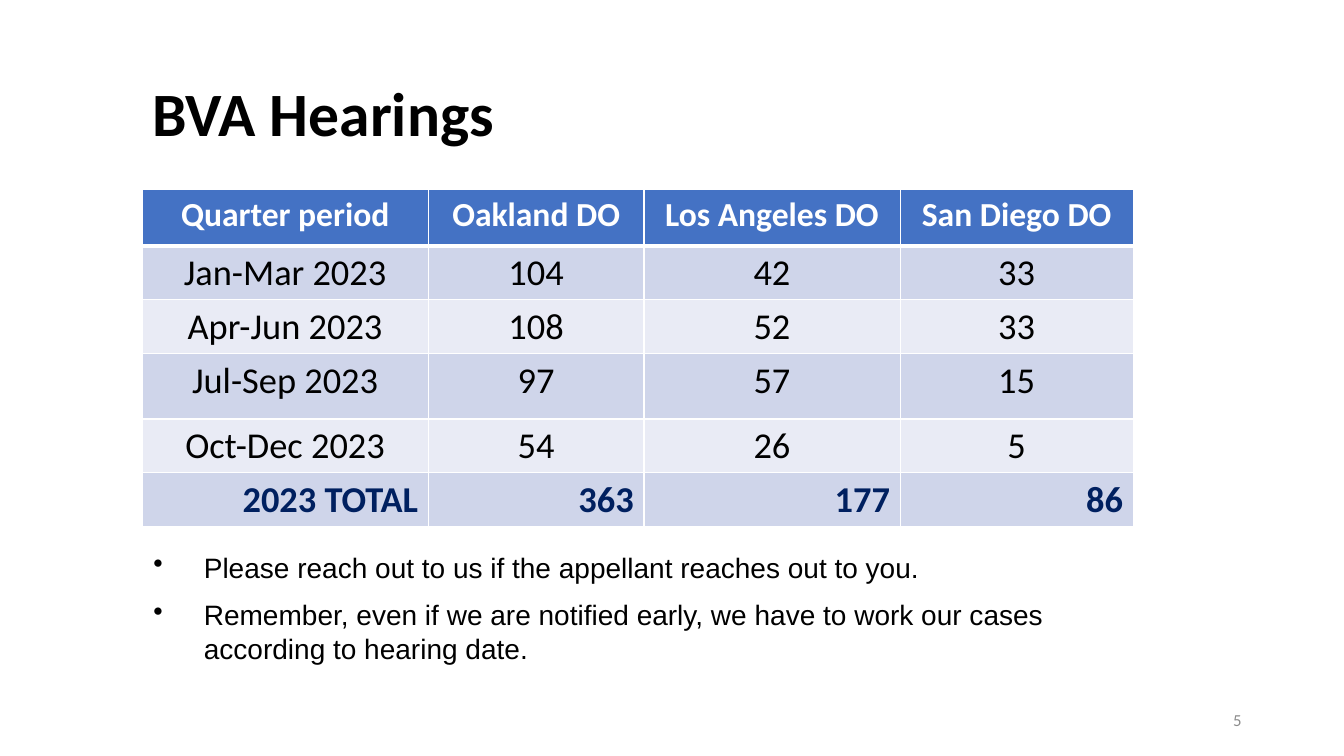
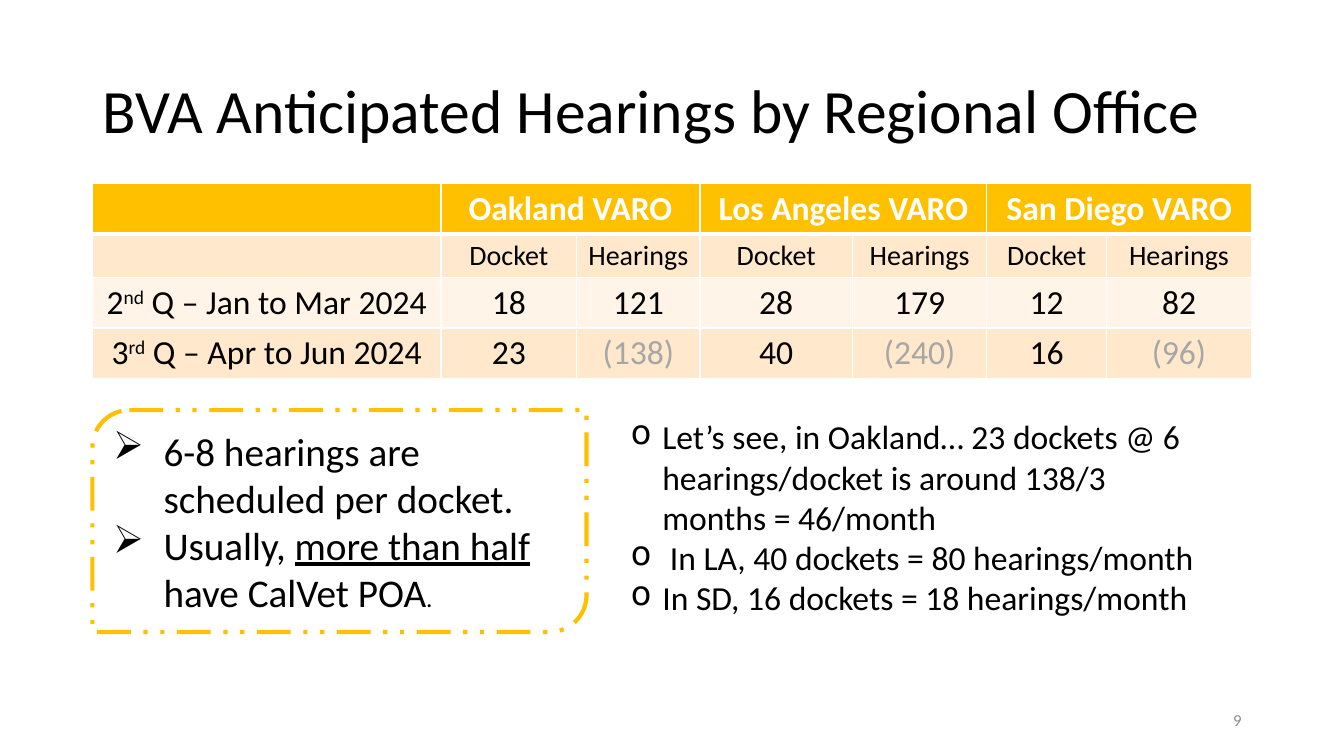
import pptx
import pptx.dml.color
import pptx.enum.dml
import pptx.enum.shapes
import pptx.enum.text
import pptx.oxml
import pptx.oxml.ns
import pptx.util

Pt = pptx.util.Pt
RGB = pptx.dml.color.RGBColor.from_string
ALIGN = pptx.enum.text.PP_ALIGN
ANCHOR = pptx.enum.text.MSO_ANCHOR
SHAPE = pptx.enum.shapes.MSO_SHAPE
NAMESPACE = pptx.oxml.ns.nsdecls("a")

THEME = {
    # Fonts
    "font": "Calibri", "note_font": "Arial",
    # Colours
    "text": "000000", "white": "FFFFFF", "page": "8C8C8C",
    "blue": "4472C4", "blue_bands": ("CFD5EA", "E9EBF5"), "total": "002060",
    "gold": "FFC000", "gold_bands": ("FFE8CC", "FFF4E7"), "estimate": "A6A6A6",
    # Type sizes
    "title": 44, "callout": 28, "count": 26, "body": 24, "note": 20,
    "full_stop": 18, "number": 12,
}


def write(paragraph, text, size, color=THEME["text"], bold=False,
          align=ALIGN.LEFT, font=THEME["font"], bullet=None):
    """Fill a paragraph with a string or a tuple of runs; bullet is (sign, left, hang)."""
    if bullet:
        sign, left, hang = bullet
        properties = paragraph._p.get_or_add_pPr()
        properties.set("marL", str(Pt(left)))
        properties.set("indent", str(-Pt(hang)))
        properties.append(pptx.oxml.parse_xml(f'<a:buChar {NAMESPACE} char="{sign}"/>'))
    if isinstance(text, str):
        paragraph.text = text
    else:
        for piece in text:
            paragraph.add_run().text = piece
    paragraph.alignment = align
    for run in paragraph.runs:
        run.font.name = font
        run.font.size = Pt(size)
        run.font.bold = bold
        run.font.color.rgb = RGB(color)


def add_grid(slide, left, top, widths, heights, header, bands):
    """Add a table with a header band, alternating rows and white rules."""
    grid = slide.shapes.add_table(len(heights), len(widths), Pt(left), Pt(top),
                                  Pt(sum(widths)), Pt(sum(heights))).table
    grid.horz_banding = False
    for column, width in zip(grid.columns, widths):
        column.width = Pt(width)
    for r, height in enumerate(heights):
        grid.rows[r].height = Pt(height)
        for cell in grid.rows[r].cells:
            cell.fill.solid()
            cell.fill.fore_color.rgb = RGB(bands[(r - 1) % 2] if r else header)
            rules = {"lnL": 1, "lnR": 1, "lnT": 3 if r == 1 else 1, "lnB": 1 if r else 3}
            for i, (side, weight) in enumerate(rules.items()):
                cell._tc.get_or_add_tcPr().insert(i, pptx.oxml.parse_xml(
                    f'<a:{side} {NAMESPACE} w="{Pt(weight)}"><a:solidFill>'
                    f'<a:srgbClr val="{THEME["white"]}"/></a:solidFill></a:{side}>'))
    return grid


deck = pptx.Presentation()
deck.slide_width, deck.slide_height = Pt(960), Pt(540)

# Titles and page numbers
pages = [
    ("BVA Hearings", True, (101.5, 46, 793, 75), "5"),
    ("BVA Anticipated Hearings by Regional Office", False, (66, 29, 828, 104.5), "9"),
]
for heading, bold, place, page in pages:
    slide = deck.slides.add_slide(deck.slide_layouts[6])
    for text, area, size, color, strong, align in (
        (heading, place, THEME["title"], THEME["text"], bold, ALIGN.LEFT),
        (page, (678, 500.5, 216, 29), THEME["number"], THEME["page"], False, ALIGN.RIGHT),
    ):
        frame = slide.shapes.add_textbox(*map(Pt, area)).text_frame
        frame.word_wrap = True
        frame.vertical_anchor = ANCHOR.MIDDLE
        write(frame.paragraphs[0], text, size, color, strong, align)
        frame.paragraphs[0].line_spacing = 0.9
past, upcoming = deck.slides

# Hearings held in 2023
held = [
    ("Quarter period", "Oakland DO", "Los Angeles DO", "San Diego DO"),
    ("Jan-Mar 2023", "104", "42", "33"),
    ("Apr-Jun 2023", "108", "52", "33"),
    ("Jul-Sep 2023", "97", "57", "15"),
    ("Oct-Dec 2023", "54", "26", "5"),
    ("2023 TOTAL", "363", "177", "86"),
]
held_grid = add_grid(past, 101.5, 135.5, (204.5, 154, 183, 166.5),
                     (40, 37.5, 37.5, 47, 37.5, 37.5), THEME["blue"], THEME["blue_bands"])
for r, row in enumerate(held):
    if r == 0:
        style = (THEME["body"], THEME["white"], True, ALIGN.CENTER)
    elif r == len(held) - 1:
        style = (THEME["count"], THEME["total"], True, ALIGN.RIGHT)
    else:
        style = (THEME["count"], THEME["text"], False, ALIGN.CENTER)
    for c, value in enumerate(row):
        write(held_grid.cell(r, c).text_frame.paragraphs[0], value, *style)

# Requests below the table
requests = past.shapes.add_textbox(Pt(73.5), Pt(389.5), Pt(749), Pt(103.5)).text_frame
requests.word_wrap = True
for i, request in enumerate((
    "Please reach out to us if the appellant reaches out to you.",
    "Remember, even if we are notified early, we have to work our cases "
    "according to hearing date.",
)):
    paragraph = requests.add_paragraph() if i else requests.paragraphs[0]
    write(paragraph, request, THEME["note"], font=THEME["note_font"], bullet=("•", 65, 36))
    if i:
        paragraph.space_before = Pt(10)

# Hearings anticipated in 2024
offices = ("Oakland VARO", "Los Angeles VARO", "San Diego VARO")
anticipated = [
    ("",) + ("Docket", "Hearings") * len(offices),
    (("2", "nd", " Q – Jan to Mar 2024"), "18", "121", "28", "179", "12", "82"),
    (("3", "rd", " Q – Apr to Jun 2024"), "23", "(138)", "40", "(240)", "16", "(96)"),
]
ahead_grid = add_grid(upcoming, 66, 131, (249, 97, 88, 109, 96, 85.5, 103.5),
                      (29.5,) * 4, THEME["gold"], THEME["gold_bands"])
for i, office in enumerate(offices):
    office_cell = ahead_grid.cell(0, 2 * i + 1)
    office_cell.merge(ahead_grid.cell(0, 2 * i + 2))
    write(office_cell.text_frame.paragraphs[0], office, THEME["body"],
          THEME["white"], True, ALIGN.CENTER)
for r, row in enumerate(anticipated, start=1):
    for c, value in enumerate(row):
        paragraph = ahead_grid.cell(r, c).text_frame.paragraphs[0]
        write(paragraph, value, THEME["note"] if r == 1 else THEME["body"],
              THEME["estimate"] if value[:1] == "(" else THEME["text"], align=ALIGN.CENTER)
        if isinstance(value, tuple):
            paragraph.runs[1]._r.get_or_add_rPr().set("baseline", "30000")

# Docket rule and worked examples
panels = [
    (SHAPE.ROUND_2_DIAG_RECTANGLE, (66, 293, 353, 158.5), ANCHOR.MIDDLE,
     THEME["callout"], ("➢", 36, 36),
     ("6-8 hearings are scheduled per docket.",
      ("Usually, ", "more than half ", "have CalVet POA", "."))),
    (SHAPE.SNIP_1_RECTANGLE, (443.5, 278, 441.5, 188.5), ANCHOR.TOP,
     THEME["body"], ("o", 22.5, 22.5),
     ("Let’s see, in Oakland… 23 dockets @ 6 hearings/docket is around 138/3 months = 46/month",
      " In LA, 40 dockets = 80 hearings/month",
      "In SD, 16 dockets = 18 hearings/month")),
]
frames = []
for outline, area, anchor, size, bullet, points in panels:
    panel = upcoming.shapes.add_shape(outline, *map(Pt, area))
    panel.shadow.inherit = False
    panel.fill.background()
    if outline == SHAPE.ROUND_2_DIAG_RECTANGLE:
        panel.line.color.rgb = RGB(THEME["gold"])
        panel.line.width = Pt(3)
        panel.line.dash_style = pptx.enum.dml.MSO_LINE.DASH_DOT_DOT
    else:
        panel.line.fill.background()
    frame = panel.text_frame
    frame.word_wrap = True
    frame.vertical_anchor = anchor
    for i, point in enumerate(points):
        paragraph = frame.add_paragraph() if i else frame.paragraphs[0]
        write(paragraph, point, size, bullet=bullet)
    frames.append(frame)
share = frames[0].paragraphs[1].runs
share[1].font.underline = True
share[3].font.size = Pt(THEME["full_stop"])

deck.save("out.pptx")
